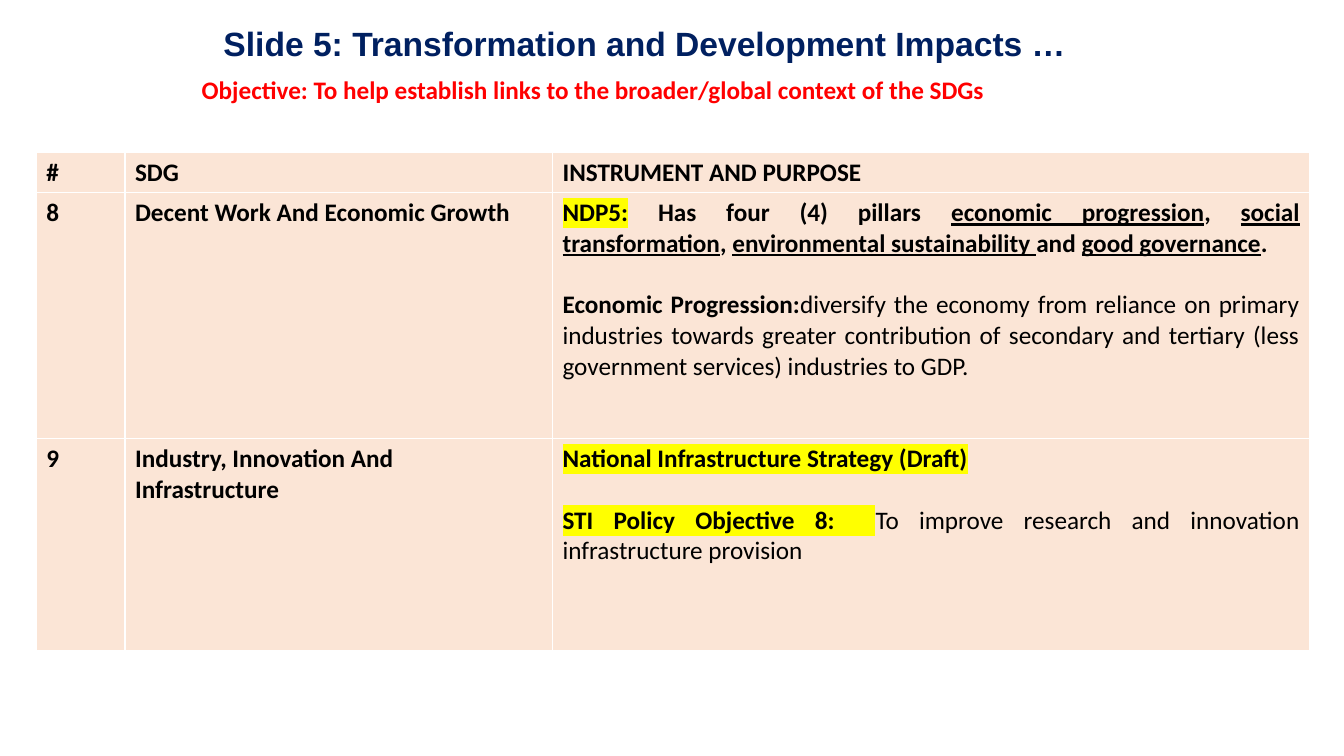
from lxml import etree
from pptx import Presentation
from pptx.dml.color import RGBColor
from pptx.enum import text
from pptx.oxml.ns import qn
from pptx.util import Inches, Pt

ALIGN = text.PP_ALIGN
COLS = (0.88, 4.24, 7.51)
ROWS = (0.4, 2.44, 2.1)
PILLARS = [
    ("NDP5:", "bh"), (" Has four (4) pillars ", "b"),
    ("economic progression", "bu"), (", ", "b"),
    ("social transformation", "bu"), (", ", "b"),
    ("environmental sustainability ", "bu"), ("and ", "b"),
    ("good governance", "bu"), (".", "b")]
GROWTH = [
    ("Economic Progression:", "b"),
    ("diversify the economy from reliance on primary industries towards "
     "greater contribution of secondary and tertiary (less government "
     "services) industries to GDP.", "")]
DRAFT = [("National Infrastructure Strategy (Draft)", "bh")]
POLICY = [
    ("STI Policy Objective 8: ", "bh"), (" ", "h"),
    ("To improve research and innovation infrastructure provision ", "")]
GOALS = [
    ("#", "SDG", [[("INSTRUMENT AND PURPOSE", "b")]]),
    ("8", "Decent Work And Economic Growth", [PILLARS, GROWTH]),
    ("9", "Industry, Innovation And Infrastructure", [DRAFT, POLICY])]


def paint(hue):
    """Return the colour of a hex string."""
    return RGBColor.from_string(hue)


def style(run, size, hue, face="Calibri", marks="b"):
    """Format a run; marks hold b for bold, u for underline, h for highlight."""
    font = run.font
    font.size, font.name = Pt(size), face
    font.bold, font.underline = "b" in marks, "u" in marks
    font.color.rgb = paint(hue)
    if "h" in marks:
        glow = etree.Element(qn("a:highlight"))
        etree.SubElement(glow, qn("a:srgbClr"), val="FFFF00")
        run._r.rPr.find(qn("a:solidFill")).addnext(glow)


def place(shape, box):
    """Move a shape to a box given in inches."""
    shape.left, shape.top, shape.width, shape.height = map(Inches, box)


def head(slide, box):
    """Place the title and the objective below it."""
    x, y, w, h = box
    title = slide.shapes.title
    place(title, (x, y, w, 0.5))
    title.text_frame.text = "Slide 5: Transformation and Development Impacts … "
    para = title.text_frame.paragraphs[0]
    para.alignment = ALIGN.CENTER
    style(para.runs[0], 24, "002060", "Arial")

    goal = slide.shapes.add_textbox(*map(Inches, (x, y + 0.51, 11.05, h - 0.51)))
    frame = goal.text_frame
    frame.word_wrap = True
    frame.margin_left = Inches(0.4)
    frame.text = ("Objective: To help establish links to the broader/global "
                  "context of the SDGs")
    style(frame.paragraphs[0].runs[0], 18, "FF0000")


def fill(cell, paras):
    """Write styled paragraphs into a cell."""
    cell.fill.solid()
    cell.fill.fore_color.rgb = paint("FBE5D6")
    frame = cell.text_frame
    for i, parts in enumerate(paras):
        para = frame.add_paragraph() if i else frame.paragraphs[0]
        if i:
            para.space_before = Pt(22)
        if len(parts) > 1:
            para.alignment = ALIGN.JUSTIFY
        for words, marks in parts:
            run = para.add_run()
            run.text = words
            style(run, 18, "000000", marks=marks)


def grid(slide, box):
    """Place the table of goals and instruments."""
    table = slide.shapes.add_table(len(ROWS), len(COLS), *map(Inches, box)).table
    table.horz_banding = False
    for col, wide in zip(table.columns, COLS):
        col.width = Inches(wide)
    for r, (num, goal, tools) in enumerate(GOALS):
        table.rows[r].height = Inches(ROWS[r])
        for c, paras in enumerate(([[(num, "b")]], [[(goal, "b")]], tools)):
            fill(table.cell(r, c), paras)


def main():
    """Build and save the slide."""
    deck = Presentation()
    deck.slide_width, deck.slide_height = Inches(13.33), Inches(7.5)
    slide = deck.slides.add_slide(deck.slide_layouts[5])
    head(slide, (1.6, 0.18, 9.68, 0.91))
    grid(slide, (0.36, 1.51, sum(COLS), sum(ROWS)))
    deck.save("out.pptx")


if __name__ == "__main__":
    main()
